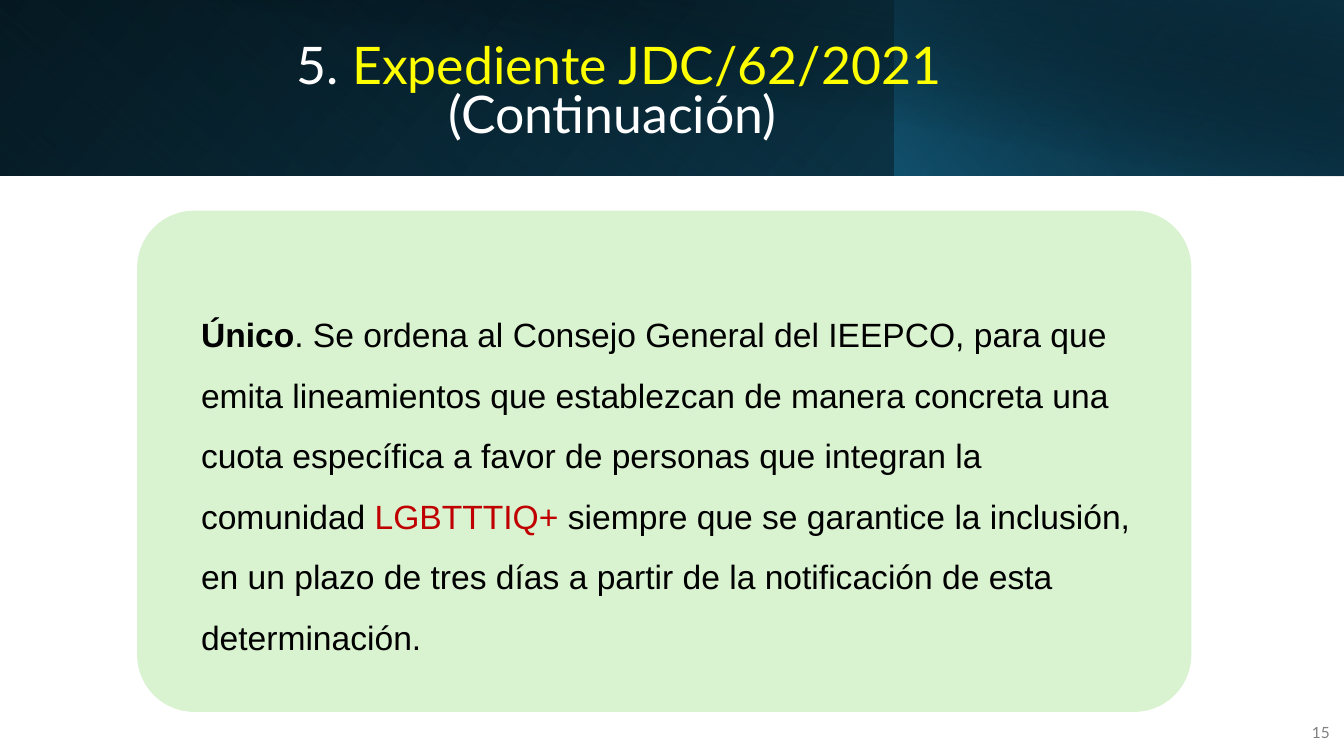
from dataclasses import dataclass

from lxml.etree import SubElement
from pptx import Presentation
from pptx.dml.color import RGBColor
from pptx.enum.shapes import MSO_SHAPE
from pptx.enum.text import MSO_ANCHOR, PP_ALIGN
from pptx.oxml.ns import qn
from pptx.util import Pt


@dataclass(frozen=True)
class Theme:
    black: str = "000000"
    white: str = "FFFFFF"
    yellow: str = "FFFF00"
    red: str = "C00000"
    gray: str = "808080"
    green: str = "D9F2D0"
    teal: str = "156082"
    blue: str = "104862"
    navy: str = "0B3041"
    heading_font: str = "Lato"
    body_font: str = "Arial"
    title_size: int = 37
    body_size: int = 24
    number_size: int = 11


class SlideBuilder:
    def __init__(self, slide, theme):
        self.slide = slide
        self.theme = theme

    def add_panel(self, kind, box):
        shape = self.slide.shapes.add_shape(kind, *map(Pt, box))
        shape.shadow.inherit = False
        shape.line.fill.background()
        return shape

    def add_gradient(self, box, angle, stops):
        """Each stop is (position, color, opacity), both numbers from 0 to 1."""
        fill = self.add_panel(MSO_SHAPE.RECTANGLE, box).fill
        fill.gradient()
        fill.gradient_angle = angle
        for stop, (position, color, opacity) in zip(fill.gradient_stops, stops):
            stop.position = position
            stop.color.rgb = RGBColor.from_string(color)
            if opacity < 1:
                color_element = stop.color._xFill if hasattr(stop.color, "_xFill") else stop._gs
                color_element = color_element.find(qn("a:srgbClr"))
                SubElement(color_element, qn("a:alpha"), val=str(round(opacity * 100000)))

    def add_card(self, box, color, rounding):
        shape = self.add_panel(MSO_SHAPE.ROUNDED_RECTANGLE, box)
        shape.adjustments[0] = rounding
        shape.fill.solid()
        shape.fill.fore_color.rgb = RGBColor.from_string(color)

    def add_text(self, box, paragraphs, font, size, align=PP_ALIGN.LEFT,
                 anchor=MSO_ANCHOR.MIDDLE, line_spacing=1.0):
        """Each paragraph is a list of (text, color, bold) runs."""
        frame = self.slide.shapes.add_textbox(*map(Pt, box)).text_frame
        frame.word_wrap = True
        frame.vertical_anchor = anchor
        for index, runs in enumerate(paragraphs):
            paragraph = frame.add_paragraph() if index else frame.paragraphs[0]
            paragraph.alignment = align
            paragraph.line_spacing = line_spacing
            for text, color, bold in runs:
                run = paragraph.add_run()
                run.text = text
                run.font.name = font
                run.font.size = Pt(size)
                run.font.bold = bold
                run.font.color.rgb = RGBColor.from_string(color)
        return frame


def main():
    presentation = Presentation()
    presentation.slide_width, presentation.slide_height = Pt(960), Pt(540)
    slide = presentation.slides.add_slide(presentation.slide_layouts[6])
    theme = Theme()
    builder = SlideBuilder(slide, theme)

    # Header band: base, left shade, right glow, top shade
    builder.add_gradient((0, 0, 960, 125.5), 320,
                         [(0, theme.black, 1), (1, theme.blue, 1)])
    builder.add_gradient((0, 0, 639, 125.5), 230,
                         [(0.2, theme.teal, 0), (1, theme.navy, 0.55)])
    builder.add_gradient((639, 0, 321, 125.5), 40,
                         [(0, theme.teal, 0.66), (1, theme.black, 0.3)])
    builder.add_gradient((36, 0, 924, 126), 80,
                         [(0.5, theme.black, 0), (0.99, theme.navy, 0.52)])

    # Slide number
    number = builder.add_text((921.5, 508.5, 35.5, 28.5), [[("15", theme.gray, False)]],
                              theme.heading_font, theme.number_size, PP_ALIGN.RIGHT)
    number.paragraphs[0].space_after = Pt(6)

    # Title
    builder.add_text(
        (48, 26.5, 779, 81.5),
        [[(" 5.", theme.white, False), (" Expediente JDC/62/2021", theme.yellow, False)],
         [("(Continuación)", theme.white, False)]],
        theme.heading_font, theme.title_size, PP_ALIGN.CENTER, line_spacing=0.8)

    # Ruling card
    builder.add_card((98, 150.5, 753, 358), theme.green, 0.114)
    builder.add_text(
        (136.5, 206.5, 690.5, 220.5),
        [[("Único", theme.black, True),
          (". Se ordena al Consejo General del IEEPCO, para que emita lineamientos que "
           "establezcan de manera concreta una cuota específica a favor de personas que "
           "integran la comunidad ", theme.black, False),
          ("LGBTTTIQ+ ", theme.red, False),
          ("siempre que se garantice la inclusión, en un plazo de tres días a partir de la "
           "notificación de esta determinación.", theme.black, False)]],
        theme.body_font, theme.body_size, anchor=MSO_ANCHOR.TOP, line_spacing=1.5)

    presentation.save("out.pptx")


if __name__ == "__main__":
    main()
